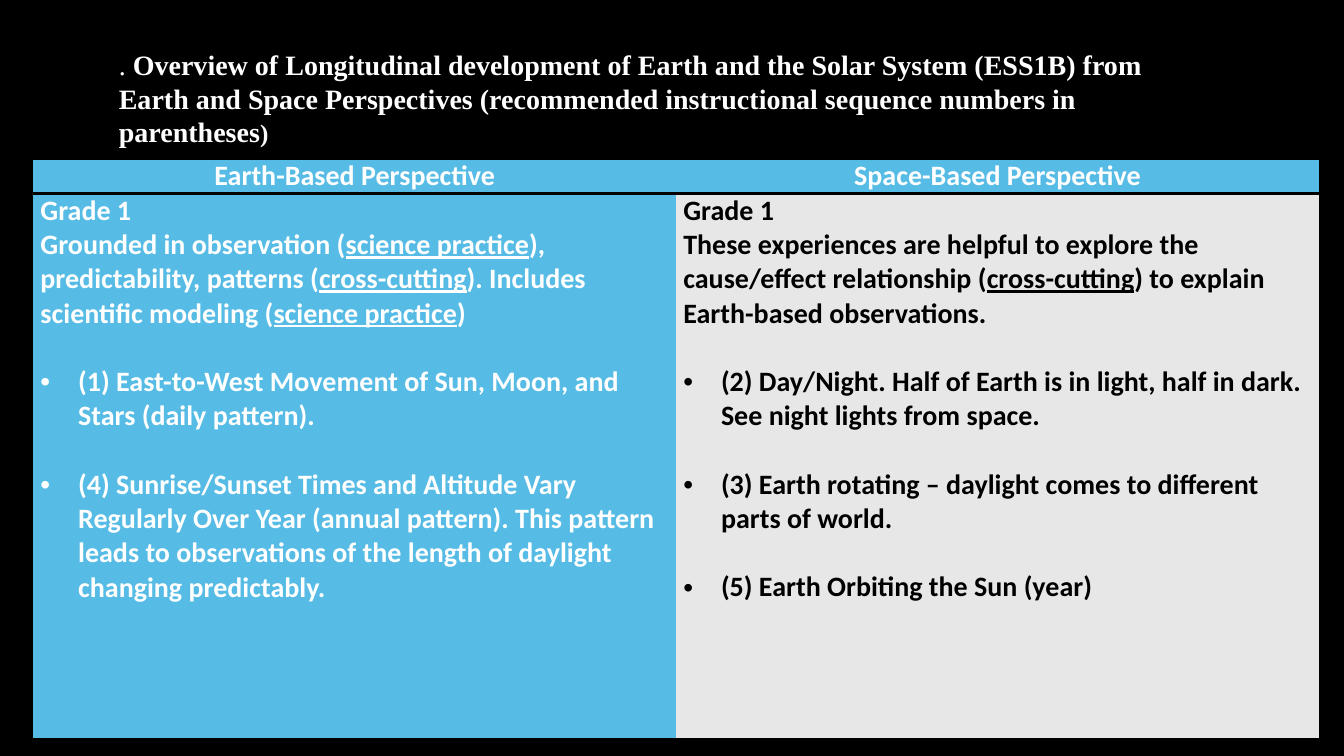
from pptx import Presentation
from pptx.dml.color import RGBColor as Rgb
from pptx.enum.text import MSO_ANCHOR as Anchor, MSO_AUTO_SIZE as Fit, PP_ALIGN as Align
from pptx.oxml import parse_xml
from pptx.oxml.ns import nsdecls
from pptx.util import Cm, Pt

BLACK = Rgb(0, 0, 0)
WHITE = Rgb(255, 255, 255)
BLUE = Rgb(0x57, 0xBC, 0xE5)
GRAY = Rgb(0xE7, 0xE7, 0xE7)
PLAIN = "{2D5ABB26-0587-4C30-8999-92F81FD0307C}"
GAP = Pt(24.4)
HANG = Cm(0.95)

HEADS = ["Earth-Based Perspective", "Space-Based Perspective"]
EARTH = [
    "Grade 1",
    "Grounded in observation (_science practice_), predictability, patterns "
    "(_cross-cutting_). Includes scientific modeling (_science practice_)",
]
EARTH_LIST = [
    "(1) East-to-West Movement of Sun, Moon, and Stars (daily pattern).",
    "(4) Sunrise/Sunset Times and Altitude Vary Regularly Over Year (annual pattern). "
    "This pattern leads to observations of the length of daylight changing predictably.",
]
SPACE = [
    "Grade 1",
    "These experiences are helpful to explore the cause/effect relationship "
    "(_cross-cutting_) to explain Earth-based observations.",
]
SPACE_LIST = [
    "(2) Day/Night. Half of Earth is in light, half in dark. See night lights from space.",
    "(3) Earth rotating – daylight comes to different parts of world.",
    "(5) Earth Orbiting the Sun (year)",
]
TITLE = [
    (". ", 20, False),
    ("Overview of Longitudinal development of Earth and the Solar System (ESS1B) from "
     "Earth and Space Perspectives (recommended instructional sequence numbers in "
     "parentheses", 20, True),
    (")", 18, True),
]


def put(item, **form):
    for key, val in form.items():
        setattr(item, key, val)


def add_run(para, text, color, **form):
    run = para.add_run()
    run.text = text
    put(run.font, **form)
    run.font.color.rgb = color


def add_title(slide):
    box = slide.shapes.title
    put(box, left=Cm(2.74), top=Cm(1.07), width=Cm(27.3), height=Cm(2.82))
    frame = box.text_frame
    put(frame, word_wrap=True, auto_size=Fit.NONE, vertical_anchor=Anchor.TOP)
    para = frame.paragraphs[0]
    put(para, alignment=Align.LEFT, line_spacing=1.0, space_before=Pt(0))
    for text, size, bold in TITLE:
        add_run(para, text, WHITE, name="Times New Roman", size=Pt(size), bold=bold)


def add_rich(para, text, color):
    for num, part in enumerate(text.split("_")):
        add_run(para, part, color, name="Calibri", size=Pt(20), bold=True,
                underline=num % 2 == 1)


def add_dot(para):
    para.space_before = GAP
    props = para._p.get_or_add_pPr()
    props.set("marL", str(HANG))
    props.set("indent", str(-HANG))
    props.append(parse_xml(f'<a:buFont {nsdecls("a")} typeface="Arial"/>'))
    props.append(parse_xml(f'<a:buChar {nsdecls("a")} char="•"/>'))


def add_edges(cell):
    props = cell._tc.get_or_add_tcPr()
    for spot, tag in enumerate(["lnT", "lnB"]):
        props.insert(spot, parse_xml(
            f'<a:{tag} {nsdecls("a")} w="{Pt(2)}"><a:solidFill>'
            f'<a:srgbClr val="{BLACK}"/></a:solidFill></a:{tag}>'))


def fill_cell(cell, back, color, lines, dots=(), align=Align.LEFT):
    put(cell, margin_left=Cm(0.18), margin_right=Cm(0.18), margin_top=0, margin_bottom=0)
    cell.fill.solid()
    cell.fill.fore_color.rgb = back
    add_edges(cell)
    frame = cell.text_frame
    for num, text in enumerate([*lines, *dots]):
        para = frame.add_paragraph() if num else frame.paragraphs[0]
        para.alignment = align
        add_rich(para, text, color)
        if num >= len(lines):
            add_dot(para)


def add_grid(slide):
    frame = slide.shapes.add_table(2, 2, Cm(0.84), Cm(4.01), Cm(32.4), Cm(14.6))
    frame._element.xpath(".//a:tableStyleId")[0].text = PLAIN
    table = frame.table
    table.horz_banding = False
    for row, tall in zip(table.rows, [0.86, 13.74]):
        row.height = Cm(tall)
    for col, head in enumerate(HEADS):
        fill_cell(table.cell(0, col), BLUE, WHITE, [head], align=Align.CENTER)
    fill_cell(table.cell(1, 0), BLUE, WHITE, EARTH, EARTH_LIST)
    fill_cell(table.cell(1, 1), GRAY, BLACK, SPACE, SPACE_LIST)


def main():
    deck = Presentation()
    put(deck, slide_width=Cm(33.87), slide_height=Cm(19.05))
    slide = deck.slides.add_slide(deck.slide_layouts[5])
    back = slide.background.fill
    back.solid()
    back.fore_color.rgb = BLACK
    add_title(slide)
    add_grid(slide)
    deck.save("out.pptx")


if __name__ == "__main__":
    main()
